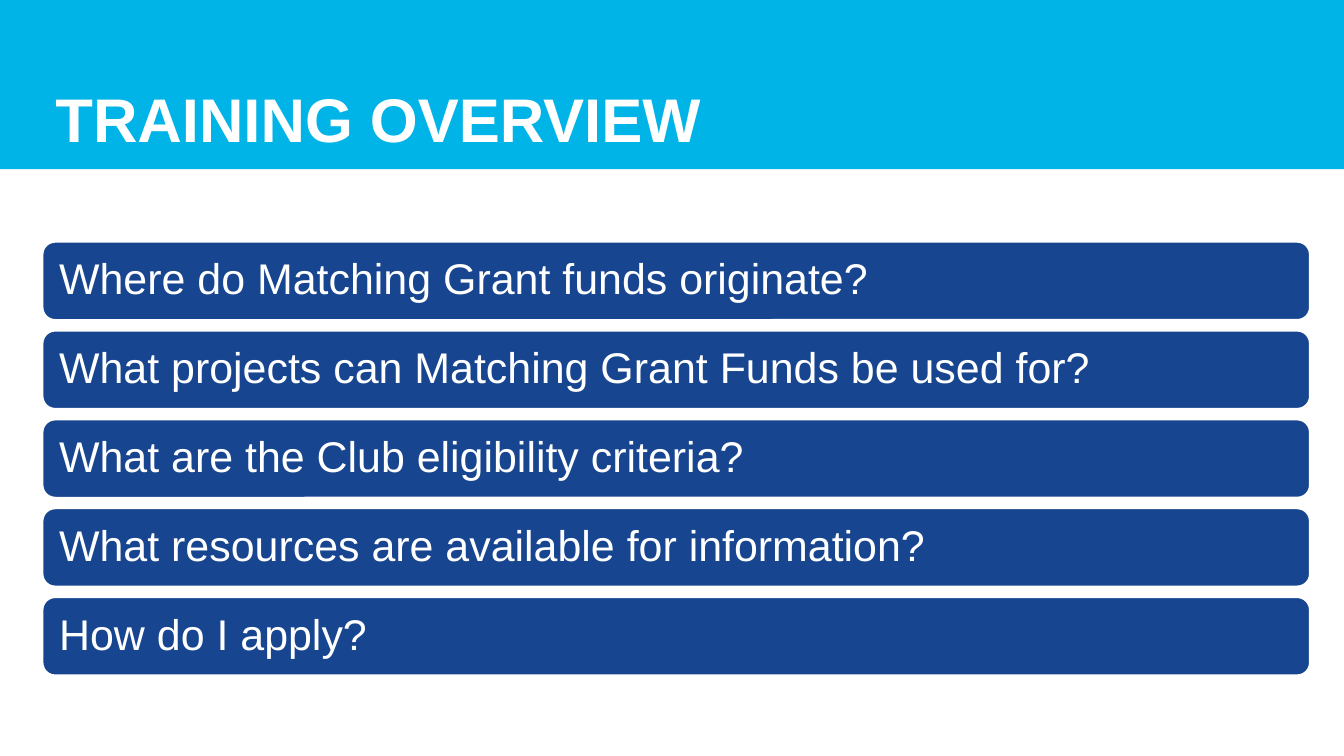
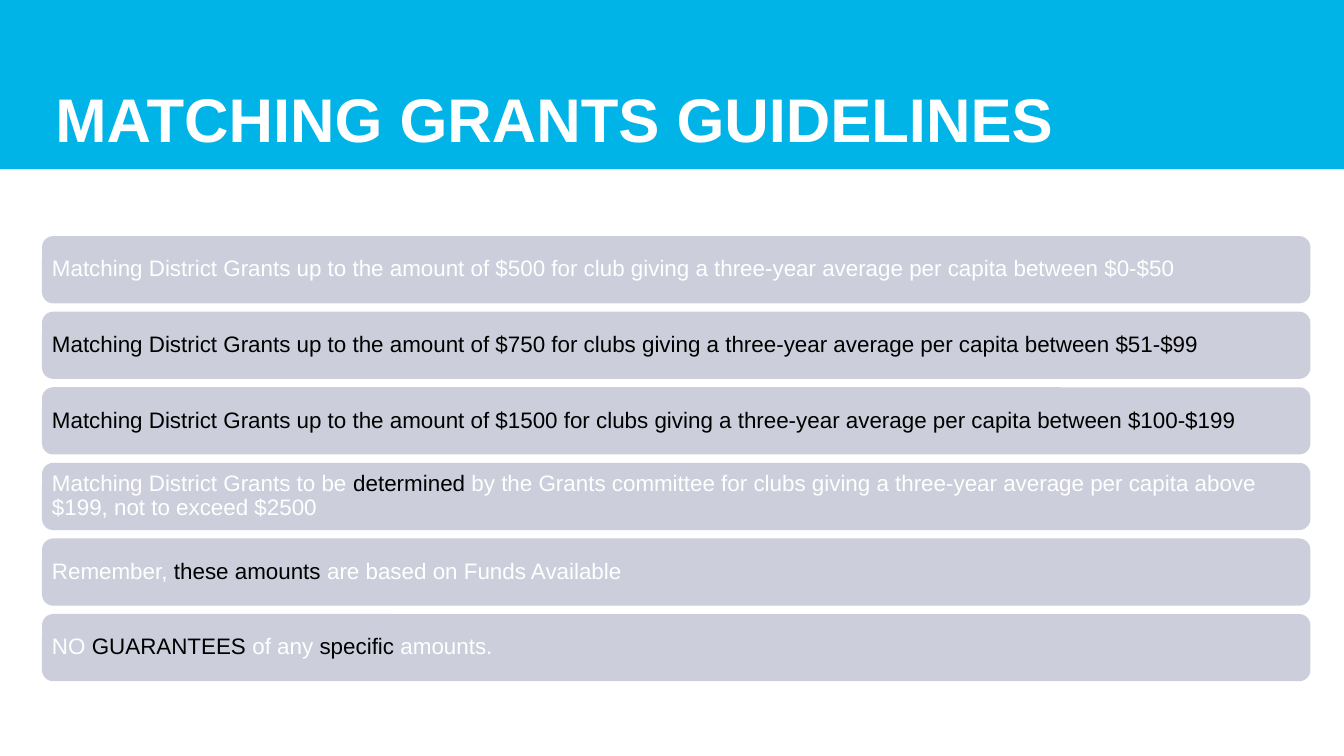
from dataclasses import dataclass

from pptx import Presentation
from pptx.dml.color import RGBColor
from pptx.enum.shapes import MSO_SHAPE
from pptx.enum.text import MSO_ANCHOR, MSO_AUTO_SIZE, PP_ALIGN
from pptx.util import Pt


@dataclass(frozen=True)
class Theme:
    font: str = "Arial"
    band: RGBColor = RGBColor(0x01, 0xB4, 0xE7)
    navy: RGBColor = RGBColor(0x17, 0x45, 0x8F)
    grey: RGBColor = RGBColor(0xCC, 0xCF, 0xDB)
    white: RGBColor = RGBColor(0xFF, 0xFF, 0xFF)
    black: RGBColor = RGBColor(0, 0, 0)
    title_size: float = 33
    question_size: float = 23
    guideline_size: float = 12


WIDTH, HEIGHT = 720, 405
LEFT, CONTENT_WIDTH = 22.5, 679.5
BAND_HEIGHT = 90.7
LINE_SPACING = 0.9

QUESTIONS = [
    "Where do Matching Grant funds originate?",
    "What projects can Matching Grant Funds be used for?",
    "What are the Club eligibility criteria?",
    "What resources are available for information?",
    "How do I apply?",
]

GUIDELINES = [
    "Matching District Grants up to the amount of $500 for club giving a three-year average per capita between $0-$50",
    "|Matching District Grants up to the amount of $750 for clubs giving a three-year average per capita between $51-$99",
    "|Matching District Grants up to the amount of $1500 for clubs giving a three-year average per capita between $100-$199",
    "Matching District Grants to be |determined| by the Grants committee for clubs giving "
    "a three-year average per capita above $199, not to exceed $2500",
    "Remember, |these amounts| are based on Funds Available",
    "NO |GUARANTEES| of any |specific| amounts.",
]


class Deck:
    def __init__(self, theme):
        self.theme = theme
        self.prs = Presentation()
        self.prs.slide_width, self.prs.slide_height = Pt(WIDTH), Pt(HEIGHT)
        self.s = None

    def slide(self, title):
        self.s = self.prs.slides.add_slide(self.prs.slide_layouts[5])
        self.band()
        self.title(title)

    def shape(self, shapes, kind, left, top, width, height, fill):
        sp = shapes.add_shape(kind, Pt(left), Pt(top), Pt(width), Pt(height))
        sp.shadow.inherit = False
        sp.fill.solid()
        sp.fill.fore_color.rgb = fill
        sp.line.fill.background()
        return sp

    def band(self):
        sp = self.shape(self.s.shapes, MSO_SHAPE.RECTANGLE, 0, 0, WIDTH, BAND_HEIGHT, self.theme.band)
        self.s.shapes.title.element.addprevious(sp.element)

    def frame(self, tf, anchor, inset):
        tf.word_wrap = True
        tf.auto_size = MSO_AUTO_SIZE.NONE
        tf.vertical_anchor = anchor
        tf.margin_left = tf.margin_right = tf.margin_top = tf.margin_bottom = Pt(inset)

    def paragraph(self, p, size, bold=False):
        p.alignment = PP_ALIGN.LEFT
        p.line_spacing = LINE_SPACING
        p.font.name = self.theme.font
        p.font.size = Pt(size)
        p.font.bold = bold

    def title(self, text):
        sp = self.s.shapes.title
        sp.left, sp.top, sp.width, sp.height = Pt(LEFT), Pt(0), Pt(CONTENT_WIDTH), Pt(BAND_HEIGHT)
        tf = sp.text_frame
        tf.text = text
        self.frame(tf, MSO_ANCHOR.BOTTOM, 7.2)
        p = tf.paragraphs[0]
        self.paragraph(p, self.theme.title_size, bold=True)
        p.font.color.rgb = self.theme.white

    def bars(self, texts, top, pitch, height, fill, size, inset, outline=None):
        group = self.s.shapes.add_group_shape()
        for i, text in enumerate(texts):
            sp = self.shape(group.shapes, MSO_SHAPE.ROUNDED_RECTANGLE,
                            LEFT, top + i * pitch, CONTENT_WIDTH, height, fill)
            if outline:
                sp.line.color.rgb = self.theme.white
                sp.line.width = Pt(outline)
            self.frame(sp.text_frame, MSO_ANCHOR.MIDDLE, inset)
            p = sp.text_frame.paragraphs[0]
            self.paragraph(p, size)
            self.runs(p, text)

    def runs(self, p, text):
        for i, part in enumerate(text.split("|")):
            if part:
                r = p.add_run()
                r.text = part
                r.font.color.rgb = self.theme.black if i % 2 else self.theme.white


def main():
    theme = Theme()
    deck = Deck(theme)

    deck.slide("TRAINING OVERVIEW")
    deck.bars(QUESTIONS, top=129.3, pitch=47.6, height=42.4, fill=theme.navy,
              size=theme.question_size, inset=7.2, outline=1.5)

    deck.slide("MATCHING GRANTS GUIDELINES")
    deck.bars(GUIDELINES, top=126.5, pitch=40.5, height=36, fill=theme.grey,
              size=theme.guideline_size, inset=3.6)

    deck.prs.save("out.pptx")


if __name__ == "__main__":
    main()
